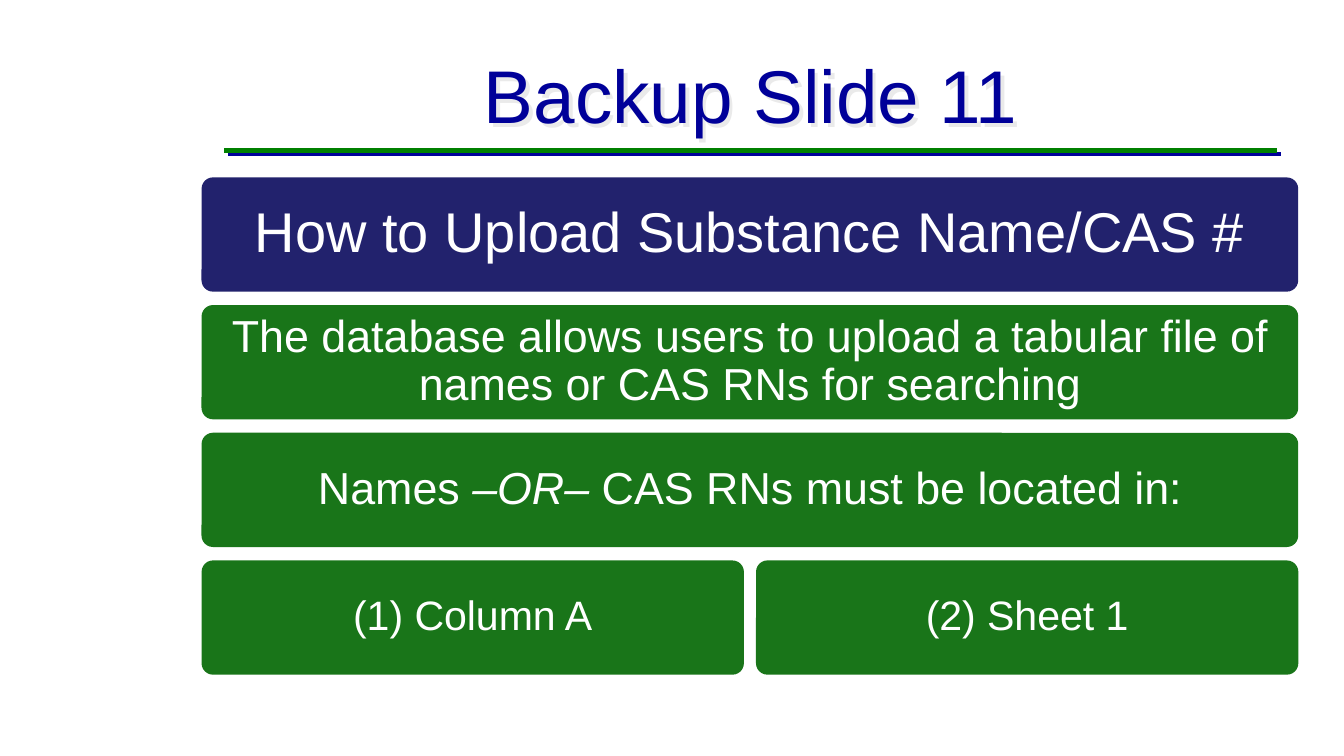
from lxml import etree
from pptx import Presentation
from pptx.dml.color import RGBColor
from pptx.enum.shapes import MSO_CONNECTOR, MSO_SHAPE
from pptx.enum.text import MSO_ANCHOR, PP_ALIGN
from pptx.oxml import parse_xml
from pptx.oxml.ns import qn
from pptx.util import Inches, Pt

NS = "http://schemas.openxmlformats.org/drawingml/2006/main"
SHADOW = (
    f'<a:effectLst xmlns:a="{NS}"><a:outerShdw dist="35921" dir="2700000">'
    '<a:srgbClr val="{}"/></a:outerShdw></a:effectLst>'
)


def rgb(code):
    return RGBColor.from_string(code)


def write(frame, text, size, color, inset=0.1, spacing=None):
    """Fill the frame with centred text; every second part between * is italic."""
    frame.word_wrap = True
    frame.vertical_anchor = MSO_ANCHOR.MIDDLE
    frame.margin_left = frame.margin_right = Inches(inset)
    frame.margin_top = frame.margin_bottom = Inches(inset)
    para = frame.paragraphs[0]
    para.alignment = PP_ALIGN.CENTER
    para.line_spacing = spacing
    for i, part in enumerate(text.split("*")):
        run = para.add_run()
        run.text = part
        run.font.size = Pt(size)
        run.font.name = "Arial"
        run.font.italic = i % 2 == 1
        run.font.color.rgb = rgb(color)


deck = Presentation()
deck.slide_width = Inches(10)
deck.slide_height = Inches(10 * 9 / 16)
slide = deck.slides.add_slide(deck.slide_layouts[5])

# Title with a soft shadow
title = slide.shapes.title
title.left, title.top = Inches(1.67), Inches(0.23)
title.width, title.height = Inches(7.83), Inches(0.94)
write(title.text_frame, "Backup Slide 11", 40, "000099", inset=0.05)
title._element.spPr.append(parse_xml(SHADOW.format("EAEAEA")))

# Rule under the title
rule = slide.shapes.add_connector(
    MSO_CONNECTOR.STRAIGHT, Inches(1.67), Inches(1.12), Inches(9.5), Inches(1.12)
)
rule.line.color.rgb = rgb("008000")
rule.line.width = Pt(2.25)
rule._element.spPr.append(parse_xml(SHADOW.format("000099")))

# Rows of boxes: texts, font size, inset, fill, opacity in percent
rows = [
    (["How to Upload Substance Name/CAS #"], 30, 0.12, "22226D", 100),
    (["The database allows users to upload a tabular file of "
      "names or CAS RNs for searching"], 24, 0.1, "006600", 90),
    (["Names *–OR– *CAS RNs must be located in:"], 24, 0.1, "006600", 90),
    (["(1) Column A", "(2) Sheet 1"], 22, 0.09, "006600", 90),
]
left, top, full, high = 1.5, 1.32, 8.16, 0.85
step, gap = 0.95, 0.09

for r, (texts, size, inset, fill, alpha) in enumerate(rows):
    wide = (full - gap * (len(texts) - 1)) / len(texts)
    for c, text in enumerate(texts):
        box = slide.shapes.add_shape(
            MSO_SHAPE.ROUNDED_RECTANGLE,
            Inches(left + c * (wide + gap)), Inches(top + r * step),
            Inches(wide), Inches(high),
        )
        box.adjustments[0] = 0.1
        box.shadow.inherit = False
        box.line.fill.background()
        box.fill.solid()
        box.fill.fore_color.rgb = rgb(fill)
        if alpha < 100:
            tone = box._element.spPr.find(qn("a:solidFill"))[0]
            etree.SubElement(tone, qn("a:alpha")).set("val", str(alpha * 1000))
        write(box.text_frame, text, size, "FFFFFF", inset, spacing=0.9)

deck.save("out.pptx")
